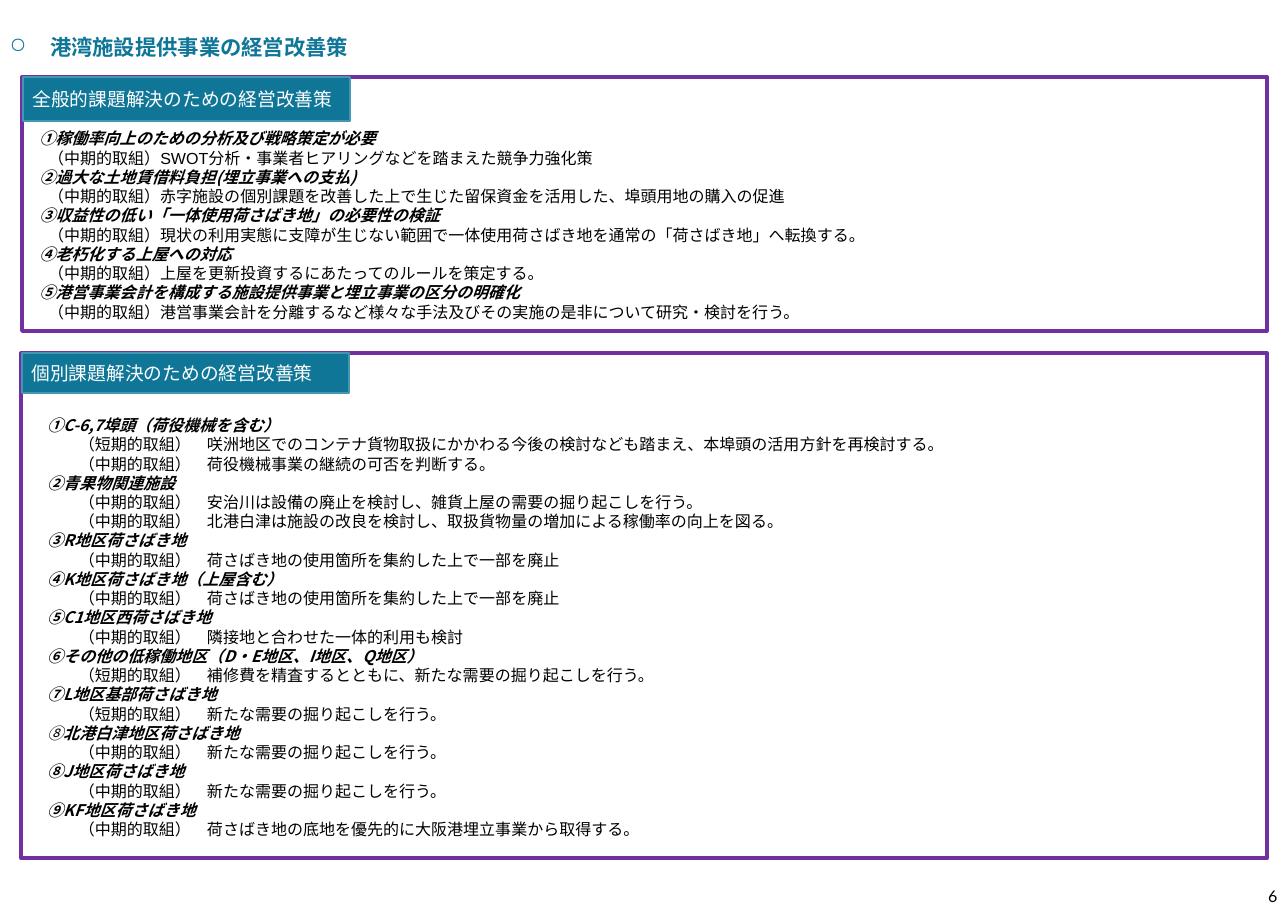
import pptx
import pptx.util
import pptx.dml.color
import pptx.enum.text
import pptx.enum.shapes
import pptx.oxml
import pptx.oxml.ns

Inches = pptx.util.Inches
Pt = pptx.util.Pt
RGB = pptx.dml.color.RGBColor.from_string
ALIGN = pptx.enum.text.PP_ALIGN
ANCHOR = pptx.enum.text.MSO_ANCHOR
JAPANESE = "Noto Sans CJK JP"

THEME = {
    "colours": {"teal": RGB("0F7698"), "tag edge": RGB("4696B1"), "frame": RGB("7030A0")},
    "line spacing": Pt(14.4),
    "fonts": {
        "title": (RGB("0F7698"), {"name": "Lato", "size": Pt(16), "bold": True}),
        "tag": (RGB("FFFFFF"), {"name": "Lato", "size": Pt(14)}),
        "heading": (RGB("000000"), {"name": JAPANESE, "size": Pt(12), "bold": True, "italic": True}),
        "light": (RGB("000000"), {"name": "Arial", "size": Pt(12), "italic": True}),
        "detail": (RGB("000000"), {"name": "Arial", "size": Pt(12)}),
        "page": (RGB("000000"), {"name": "Lato", "size": Pt(12)}),
    },
}
FRAME = {
    "word_wrap": True,
    "auto_size": pptx.enum.text.MSO_AUTO_SIZE.NONE,
    "margin_left": Inches(0.1),
    "margin_right": Inches(0.1),
    "margin_top": Inches(0.05),
    "margin_bottom": Inches(0.05),
    "vertical_anchor": ANCHOR.MIDDLE,
}


def add_run(paragraph, text, style):
    run = paragraph.add_run()
    run.text = text
    colour, values = THEME["fonts"][style]
    for key, value in values.items():
        setattr(run.font, key, value)
    run.font.color.rgb = colour
    east_asian = pptx.oxml.parse_xml(f'<a:ea {pptx.oxml.ns.nsdecls("a")} typeface="{JAPANESE}"/>')
    run.font._element.append(east_asian)


def place(item, bounds, **changes):
    item.left, item.top, item.width, item.height = map(Inches, bounds)
    for key, value in {**FRAME, **changes}.items():
        setattr(item.text_frame, key, value)
    return item.text_frame.paragraphs[0]


general_measures = [
    ("heading", "①", "稼働率向上のための分析及び戦略策定が必要",
     ["（中期的取組）SWOT分析・事業者ヒアリングなどを踏まえた競争力強化策"]),
    ("heading", "②", "過大な土地賃借料負担(埋立事業への支払)",
     ["（中期的取組）赤字施設の個別課題を改善した上で生じた留保資金を活用した、埠頭用地の購入の促進"]),
    ("heading", "③", "収益性の低い「一体使用荷さばき地」の必要性の検証",
     ["（中期的取組）現状の利用実態に支障が生じない範囲で一体使用荷さばき地を通常の「荷さばき地」へ転換する。"]),
    ("heading", "④", "老朽化する上屋への対応",
     ["（中期的取組）上屋を更新投資するにあたってのルールを策定する。"]),
    ("heading", "⑤", "港営事業会計を構成する施設提供事業と埋立事業の区分の明確化",
     ["（中期的取組）港営事業会計を分離するなど様々な手法及びその実施の是非について研究・検討を行う。"]),
]
individual_measures = [
    ("heading", "①", "C-6,7埠頭（荷役機械を含む）",
     ["（短期的取組）　咲洲地区でのコンテナ貨物取扱にかかわる今後の検討なども踏まえ、本埠頭の活用方針を再検討する。",
      "（中期的取組）　荷役機械事業の継続の可否を判断する。"]),
    ("heading", "②", "青果物関連施設",
     ["（中期的取組）　安治川は設備の廃止を検討し、雑貨上屋の需要の掘り起こしを行う。",
      "（中期的取組）　北港白津は施設の改良を検討し、取扱貨物量の増加による稼働率の向上を図る。"]),
    ("heading", "③", "R地区荷さばき地", ["（中期的取組）　荷さばき地の使用箇所を集約した上で一部を廃止"]),
    ("heading", "④", "K地区荷さばき地（上屋含む）", ["（中期的取組）　荷さばき地の使用箇所を集約した上で一部を廃止"]),
    ("heading", "⑤", "C1地区西荷さばき地", ["（中期的取組）　隣接地と合わせた一体的利用も検討"]),
    ("heading", "⑥", "その他の低稼働地区（D・E地区、I地区、Q地区）",
     ["（短期的取組）　補修費を精査するとともに、新たな需要の掘り起こしを行う。"]),
    ("heading", "⑦", "L地区基部荷さばき地", ["（短期的取組）　新たな需要の掘り起こしを行う。"]),
    ("light", "⑧", "北港白津地区荷さばき地", ["（中期的取組）　新たな需要の掘り起こしを行う。"]),
    ("heading", "⑧", "J地区荷さばき地", ["（中期的取組）　新たな需要の掘り起こしを行う。"]),
    ("heading", "⑨", "KF地区荷さばき地", ["（中期的取組）　荷さばき地の底地を優先的に大阪港埋立事業から取得する。"]),
]
sections = [
    ("全般的課題解決のための経営改善策", (0.24, 0.8, 3.4, 0.46),
     general_measures, (0.23, 0.8, 12.94, 2.64), 0.54, 0.08, 0.17),
    ("個別課題解決のための経営改善策", (0.23, 3.67, 3.4, 0.42),
     individual_measures, (0.22, 3.67, 12.95, 5.25), 0.65, 0.17, 0.5),
]

deck = pptx.Presentation()
deck.slide_width, deck.slide_height = Inches(13.39), Inches(9.45)
slide = deck.slides.add_slide(deck.slide_layouts[3])
title, *measure_lists = slide.placeholders

heading = place(title, (0, 0.3, 13.39, 0.37))
heading.alignment = ALIGN.LEFT
properties = heading._p.get_or_add_pPr()
properties.set("marL", str(Inches(0.42)))
properties.set("indent", str(-Inches(0.42)))
properties.append(pptx.oxml.parse_xml(f'<a:buChar {pptx.oxml.ns.nsdecls("a")} char="○"/>'))
add_run(heading, "港湾施設提供事業の経営改善策", "title")

for measures, section in zip(measure_lists, sections):
    tag_text, tag_bounds, entries, bounds, top, heading_indent, detail_indent = section
    line = place(measures, bounds, margin_top=Inches(top), vertical_anchor=ANCHOR.TOP)
    measures.line.color.rgb = THEME["colours"]["frame"]
    measures.line.width = Pt(3)
    rows = []
    for number_style, number, name, details in entries:
        rows.append((heading_indent, [(number, number_style), (name, "heading")]))
        rows += [(detail_indent, [(detail, "detail")]) for detail in details]
    for index, (indent, runs) in enumerate(rows):
        if index:
            line = measures.text_frame.add_paragraph()
        properties = line._p.get_or_add_pPr()
        properties.set("marL", str(Inches(indent)))
        properties.set("indent", "0")
        properties.append(pptx.oxml.parse_xml(f'<a:buNone {pptx.oxml.ns.nsdecls("a")}/>'))
        line.alignment = ALIGN.JUSTIFY
        line.space_before = Pt(0)
        line.line_spacing = THEME["line spacing"]
        for text, style in runs:
            add_run(line, text, style)

    tag = slide.shapes.add_shape(pptx.enum.shapes.MSO_SHAPE.RECTANGLE, *map(Inches, tag_bounds))
    tag.shadow.inherit = False
    tag.fill.solid()
    tag.fill.fore_color.rgb = THEME["colours"]["teal"]
    tag.line.color.rgb = THEME["colours"]["tag edge"]
    tag.line.width = Pt(1.5)
    label = place(tag, tag_bounds)
    label.alignment = ALIGN.LEFT
    add_run(label, tag_text, "tag")

page_bounds = (12.63, 9.18, 0.75, 0.27)
page = place(slide.shapes.add_textbox(*map(Inches, page_bounds)), page_bounds)
page.alignment = ALIGN.RIGHT
add_run(page, "6", "page")

deck.save("out.pptx")
